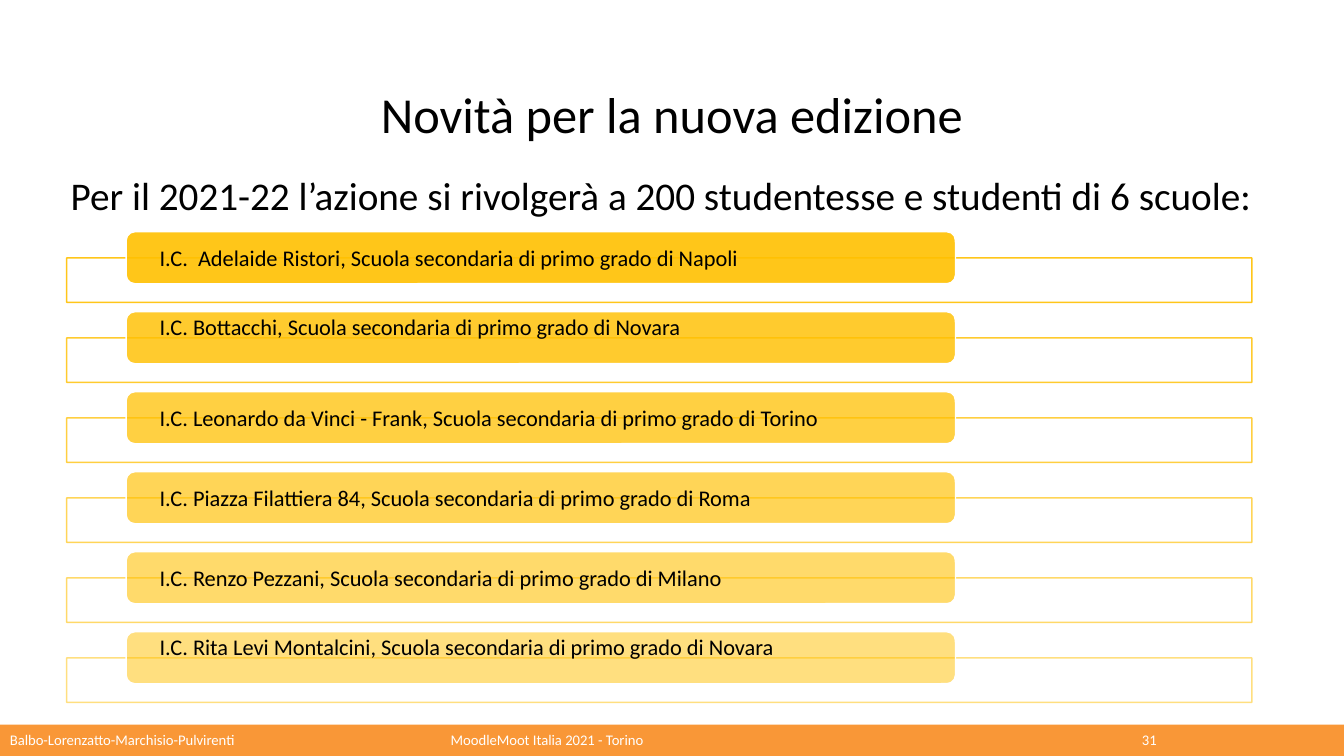
"""Build the slide listing the six schools of the new edition."""
from lxml import etree
from pptx import Presentation
from pptx.dml.color import RGBColor
from pptx.enum.shapes import MSO_SHAPE
from pptx.enum.text import MSO_ANCHOR, PP_ALIGN
from pptx.oxml.ns import qn
from pptx.util import Cm, Pt

RECTANGLE, ROUNDED = MSO_SHAPE.RECTANGLE, MSO_SHAPE.ROUNDED_RECTANGLE
TOP, MIDDLE = MSO_ANCHOR.TOP, MSO_ANCHOR.MIDDLE
LEFT, CENTER = PP_ALIGN.LEFT, PP_ALIGN.CENTER

TITLE = "Novità per la nuova edizione"
INTRO = "Per il 2021-22 l’azione si rivolgerà a 200 studentesse e studenti di 6 scuole:"
RAISED, CENTERED = 0.55, 0
SCHOOLS = [
    ("I.C.  Adelaide Ristori, Scuola secondaria di primo grado di Napoli", CENTERED),
    ("I.C. Bottacchi, Scuola secondaria di primo grado di Novara", RAISED),
    ("I.C. Leonardo da Vinci - Frank, Scuola secondaria di primo grado di Torino", CENTERED),
    ("I.C. Piazza Filattiera 84, Scuola secondaria di primo grado di Roma", CENTERED),
    ("I.C. Renzo Pezzani, Scuola secondaria di primo grado di Milano", CENTERED),
    ("I.C. Rita Levi Montalcini, Scuola secondaria di primo grado di Novara", RAISED),
]
FOOTER = [
    ("Balbo-Lorenzatto-Marchisio-Pulvirenti", 0.25, 10),
    ("MoodleMoot Italia 2021 - Torino", 11.36, 10),
    ("31", 28.78, 2),
]


class Theme:
    """Colours and type sizes."""
    font = "Calibri"
    black = RGBColor(0, 0, 0)
    white = RGBColor(255, 255, 255)
    amber = RGBColor(0xFF, 0xC0, 0x00)
    orange = RGBColor(0xF9, 0x97, 0x37)
    title, intro, school, footer = Pt(36), Pt(28), Pt(16), Pt(10.5)


def set_opacity(fill, percent):
    """Make a solid fill partly transparent."""
    color = fill._xPr.find(qn("a:solidFill"))[0]
    etree.SubElement(color, qn("a:alpha")).set("val", str(percent * 1000))


def write(shape, text, size, color, align=LEFT, anchor=MIDDLE, spacing=0.9):
    """Set the single paragraph of a shape."""
    frame = shape.text_frame
    frame.word_wrap = True
    frame.vertical_anchor = anchor
    paragraph = frame.paragraphs[0]
    paragraph.text = text
    paragraph.alignment = align
    paragraph.line_spacing = spacing
    paragraph.font.name = Theme.font
    paragraph.font.size = size
    paragraph.font.color.rgb = color
    return frame


def add_box(slide, kind, left, top, width, height):
    """Add a shadowless preset shape placed in centimetres."""
    shape = slide.shapes.add_shape(kind, Cm(left), Cm(top), Cm(width), Cm(height))
    shape.shadow.inherit = False
    return shape


def add_text(slide, left, top, width, height):
    """Add a text box placed in centimetres."""
    return slide.shapes.add_textbox(Cm(left), Cm(top), Cm(width), Cm(height))


def add_school(slide, index, name, bottom_inset):
    """Draw one outlined band with its pill label."""
    offset = 2.016 * index
    opacity = 90 - 8 * index

    band = add_box(slide, RECTANGLE, 1.68, 6.5 + offset, 29.87, 1.12)
    band.fill.background()
    band.line.width = Pt(1)
    band.line.color.rgb = Theme.amber
    set_opacity(band.line.fill, opacity)

    pill = add_box(slide, ROUNDED, 3.18, 5.84 + offset, 20.9, 1.31)
    pill.fill.solid()
    pill.fill.fore_color.rgb = Theme.amber
    set_opacity(pill.fill, opacity)
    pill.line.width = Pt(1)
    pill.line.color.rgb = Theme.white
    frame = write(pill, name, Theme.school, Theme.black, spacing=1.0)
    frame.margin_left = frame.margin_right = Cm(0.78)
    frame.margin_top = 0
    frame.margin_bottom = Cm(bottom_inset)


def add_footer(slide):
    """Draw the footer bar and its three texts."""
    top, height = 18.26, 0.79
    bar = add_box(slide, RECTANGLE, 0, top, 33.87, height)
    bar.fill.solid()
    bar.fill.fore_color.rgb = Theme.orange
    bar.line.fill.background()
    for text, left, width in FOOTER:
        box = add_text(slide, left, top, width, height)
        frame = write(box, text, Theme.footer, Theme.white)
        frame.margin_left = frame.margin_right = 0
        frame.margin_top = frame.margin_bottom = 0


def main():
    """Assemble and save the presentation."""
    presentation = Presentation()
    presentation.slide_width, presentation.slide_height = Cm(33.87), Cm(19.05)
    slide = presentation.slides.add_slide(presentation.slide_layouts[6])

    add_footer(slide)
    title = add_text(slide, 2.33, 1.88, 29.21, 2.13)
    write(title, TITLE, Theme.title, Theme.black, CENTER)
    intro = add_text(slide, 0.28, 4.32, 32.74, 1.4)
    write(intro, INTRO, Theme.intro, Theme.black, CENTER, TOP)
    for index, (name, bottom_inset) in enumerate(SCHOOLS):
        add_school(slide, index, name, bottom_inset)

    presentation.save("out.pptx")


if __name__ == "__main__":
    main()
